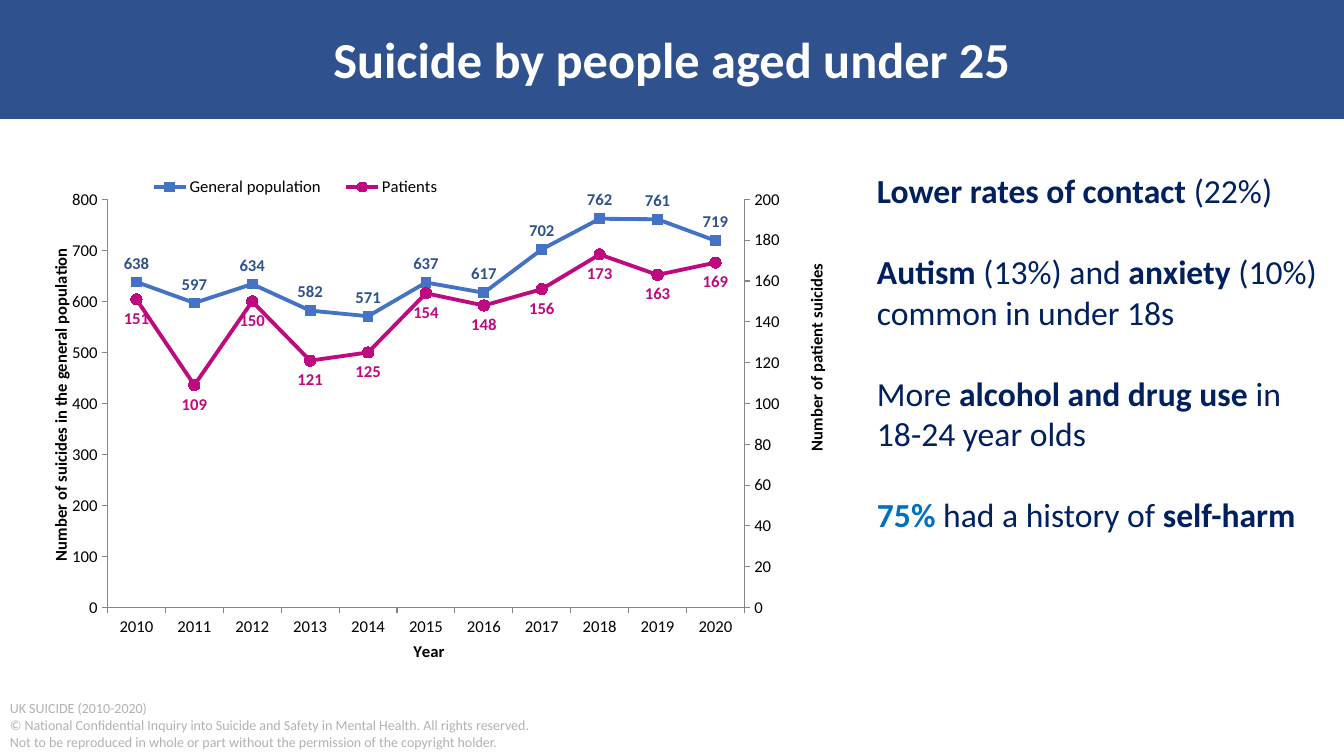
"""Build the slide on suicide by people aged under 25."""
from copy import deepcopy

from lxml import etree
from pptx import Presentation
from pptx.chart.axis import CategoryAxis, ValueAxis
from pptx.chart.data import CategoryChartData
from pptx.dml.color import RGBColor
from pptx.enum import chart as ec, shapes, text
from pptx.oxml.ns import qn
from pptx.util import Inches, Pt

FONT = "Calibri"
COLOURS = {"band": "2F528F", "white": "FFFFFF", "navy": "002060", "bright": "0070C0",
           "footer": "B2B2B2", "black": "000000", "axis": "868686",
           "population": "4472C4", "patients": "BE0980"}
TITLE = "Suicide by people aged under 25"
FOOTER = [
    "UK SUICIDE (2010-2020)",
    "© National Confidential Inquiry into Suicide and Safety in Mental Health. All rights reserved.",
    "Not to be reproduced in whole or part without the permission of the copyright holder.",
]
FINDINGS = [
    (False, [("Lower rates of contact ", True, "navy"), ("(22%)", False, "navy")]),
    (True, [("Autism", True, "navy"), (" (13%) and ", False, "navy"),
            ("anxiety ", True, "navy"), ("(10%) common in under 18s", False, "navy")]),
    (True, [("More", False, "navy"), (" alcohol and drug use ", True, "navy"),
            ("in", False, "navy")]),
    (False, [("18-24 year olds", False, "navy")]),
    (True, [("75% ", True, "bright"), ("had a history of ", False, "navy"),
            ("self-harm", True, "navy")]),
]
YEARS = [str(year) for year in range(2010, 2021)]
SERIES = [
    ("General population", [638, 597, 634, 582, 571, 637, 617, 702, 762, 761, 719],
     "population", "band", ec.XL_MARKER_STYLE.SQUARE, 7, ec.XL_LABEL_POSITION.ABOVE),
    ("Patients", [151, 109, 150, 121, 125, 154, 148, 156, 173, 163, 169],
     "patients", "patients", ec.XL_MARKER_STYLE.CIRCLE, 8, ec.XL_LABEL_POSITION.BELOW),
]


def style(font, size, colour, bold=False):
    font.name, font.size, font.bold = FONT, Pt(size), bold
    font.color.rgb = RGBColor.from_string(COLOURS[colour])


def text_box(slide, left, top, width, height):
    box = slide.shapes.add_textbox(*map(Inches, (left, top, width, height)))
    frame = box.text_frame
    frame.word_wrap = True
    frame.auto_size = text.MSO_AUTO_SIZE.SHAPE_TO_FIT_TEXT
    return frame


def place(element, **fractions):
    """Give a chart part a manual layout, in fractions of the chart."""
    for old in element.findall(qn("c:layout")):
        element.remove(old)
    leading = [child for child in element if child.tag in (qn("c:tx"), qn("c:legendPos"))]
    layout = etree.Element(qn("c:layout"))
    manual = etree.SubElement(layout, qn("c:manualLayout"))
    if element.tag == qn("c:plotArea"):
        etree.SubElement(manual, qn("c:layoutTarget"), val="inner")
    for key in ("xMode", "yMode"):
        etree.SubElement(manual, qn("c:" + key), val="edge")
    for key, value in fractions.items():
        etree.SubElement(manual, qn("c:" + key), val=str(value))
    element.insert(len(leading), layout)


def title_axis(axis, caption, x, y, upright=False):
    frame = axis.axis_title.text_frame
    frame.text = caption
    style(frame.paragraphs[0].runs[0].font, 12, "black", True)
    title = axis.axis_title.element
    if upright:
        body = title.find(".//" + qn("a:bodyPr"))
        body.set("rot", "-5400000")
        body.set("vert", "horz")
    place(title, x=x, y=y)


def format_axis(axis):
    axis.has_major_gridlines = False
    axis.major_tick_mark = ec.XL_TICK_MARK.OUTSIDE
    axis.minor_tick_mark = ec.XL_TICK_MARK.NONE
    style(axis.tick_labels.font, 12, "black")
    axis.format.line.color.rgb = RGBColor.from_string(COLOURS["axis"])
    axis.format.line.width = Pt(0.75)


def add_right_axis(chart):
    """Move the patients series to a second line plot with its own axes."""
    plot_area = chart.element.find(".//" + qn("c:plotArea"))
    left_plot = plot_area.find(qn("c:lineChart"))
    years, left = plot_area.find(qn("c:catAx")), plot_area.find(qn("c:valAx"))
    right_plot, hidden_years, right = map(deepcopy, (left_plot, years, left))
    left_plot.remove(left_plot.findall(qn("c:ser"))[1])
    right_plot.remove(right_plot.findall(qn("c:ser"))[0])
    left_plot.addnext(right_plot)
    left.addnext(right)
    right.addnext(hidden_years)

    year_id, value_id = "50010", "50020"
    for reference, new_id in zip(right_plot.findall(qn("c:axId")), (year_id, value_id)):
        reference.set("val", new_id)
    for axis, own, other in ((hidden_years, year_id, value_id), (right, value_id, year_id)):
        axis.find(qn("c:axId")).set("val", own)
        axis.find(qn("c:crossAx")).set("val", other)
    right.find(qn("c:axPos")).set("val", "r")
    right.find(qn("c:crosses")).set("val", "max")

    hidden = CategoryAxis(hidden_years)
    hidden.has_title = False
    hidden.visible = False
    patient_axis = ValueAxis(right)
    patient_axis.maximum_scale, patient_axis.major_unit = 200, 20
    title_axis(patient_axis, "Number of patient suicides", 0.967, 0.231, True)


def add_suicide_chart(slide):
    data = CategoryChartData()
    data.categories = YEARS
    for name, values, *_ in SERIES:
        data.add_series(name, values)
    chart = slide.shapes.add_chart(ec.XL_CHART_TYPE.LINE_MARKERS, Inches(0.21), Inches(1.42),
                                   Inches(8.04), Inches(5.19), data).chart
    style(chart.font, 18, "black")
    chart.has_title = False
    chart.plots[0].vary_by_categories = False

    for line, (_, _, colour, label_colour, marker, size, position) in zip(
            chart.plots[0].series, SERIES):
        rgb = RGBColor.from_string(COLOURS[colour])
        line.smooth = False
        line.format.line.color.rgb = rgb
        line.format.line.width = Pt(2.75)
        line.marker.style, line.marker.size = marker, size
        line.marker.format.fill.solid()
        line.marker.format.fill.fore_color.rgb = rgb
        line.marker.format.line.color.rgb = rgb
        labels = line.data_labels
        labels.show_value, labels.position = True, position
        style(labels.font, 12, label_colour, True)

    population_axis = chart.value_axis
    population_axis.minimum_scale, population_axis.maximum_scale = 0, 800
    population_axis.major_unit = 100
    for axis in (chart.category_axis, population_axis):
        format_axis(axis)
    title_axis(chart.category_axis, "Year", 0.482, 0.956)
    title_axis(population_axis, "Number of suicides in the general population",
               0.031, 0.203, True)

    chart.has_legend = True
    chart.legend.position = ec.XL_LEGEND_POSITION.RIGHT
    chart.legend.include_in_layout = False
    style(chart.legend.font, 12, "black")
    place(chart.element.find(".//" + qn("c:legend")), x=0.14, y=0.06, w=0.4, h=0.05)
    place(chart.element.find(".//" + qn("c:plotArea")), x=0.107, y=0.109, w=0.789, h=0.791)
    add_right_axis(chart)


def main():
    deck = Presentation()
    deck.slide_width, deck.slide_height = Inches(13.33), Inches(7.5)
    slide = deck.slides.add_slide(deck.slide_layouts[5])

    heading = slide.shapes.title
    heading.left, heading.top, heading.width, heading.height = map(Inches, (0, 0.22, 13.33, 0.71))
    heading.text_frame.text = TITLE
    heading.text_frame.vertical_anchor = text.MSO_ANCHOR.MIDDLE
    heading.text_frame.paragraphs[0].alignment = text.PP_ALIGN.CENTER
    style(heading.text_frame.paragraphs[0].runs[0].font, 36, "white", True)

    band = slide.shapes.add_shape(shapes.MSO_SHAPE.RECTANGLE, 0, 0, deck.slide_width, Inches(1.18))
    band.shadow.inherit = False
    band.fill.solid()
    band.fill.fore_color.rgb = RGBColor.from_string(COLOURS["band"])
    band.line.fill.background()
    heading.element.addprevious(band.element)

    footer = text_box(slide, 0, 6.89, 7.87, 0.61)
    footer.text = "\n".join(FOOTER)
    for paragraph in footer.paragraphs:
        style(paragraph.runs[0].font, 10, "footer")

    add_suicide_chart(slide)

    findings = text_box(slide, 8.6, 1.64, 4.73, 4.14)
    for index, (gap, pieces) in enumerate(FINDINGS):
        paragraph = findings.add_paragraph() if index else findings.paragraphs[0]
        if gap:
            paragraph.space_before = Pt(29)
        for words, bold, colour in pieces:
            run = paragraph.add_run()
            run.text = words
            style(run.font, 24, colour, bold)

    deck.save("out.pptx")


if __name__ == "__main__":
    main()
